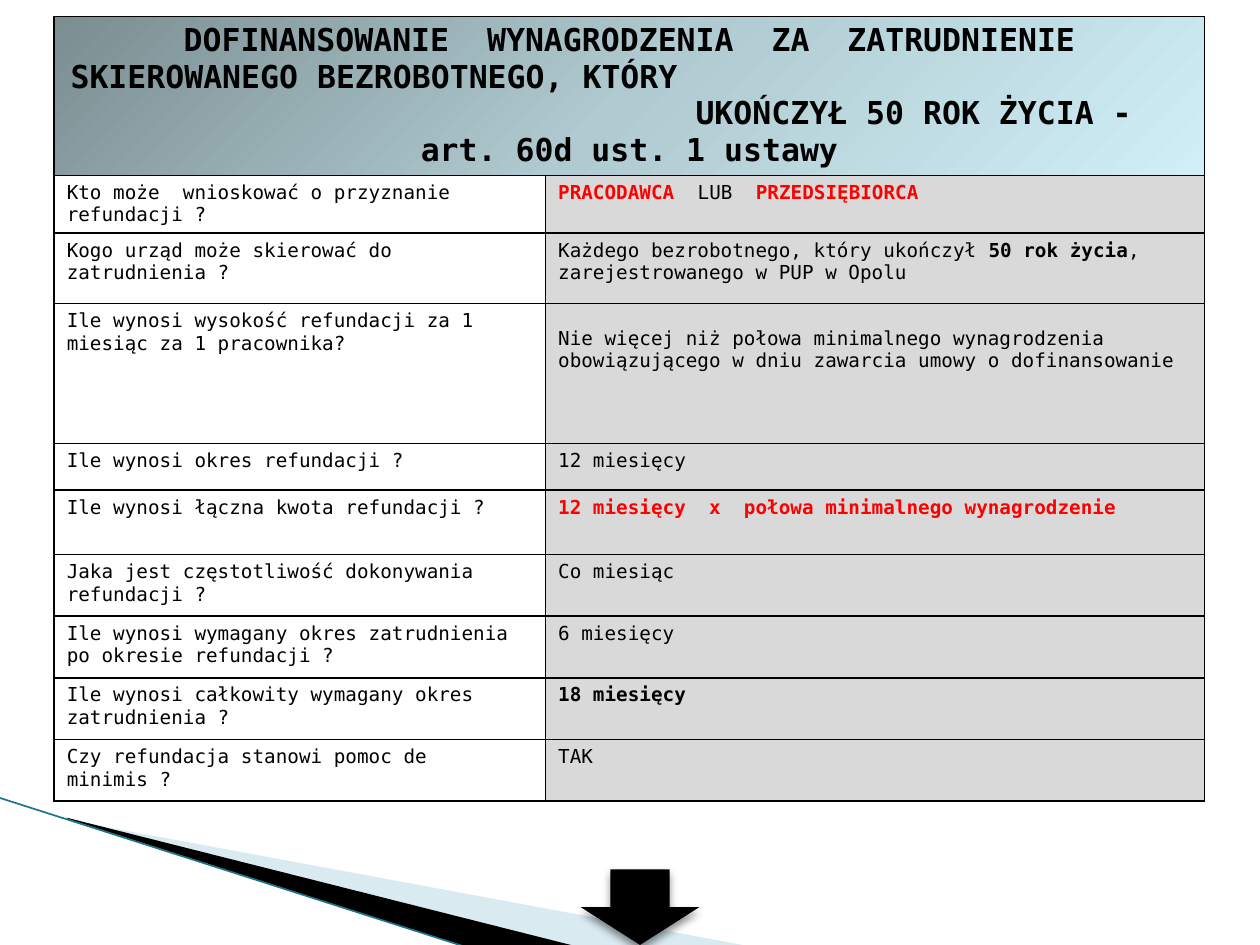
from copy import deepcopy

from lxml.etree import SubElement
from pptx import Presentation
from pptx.dml.color import RGBColor
from pptx.enum.shapes import MSO_CONNECTOR, MSO_SHAPE
from pptx.enum.text import PP_ALIGN
from pptx.oxml import parse_xml
from pptx.oxml.ns import nsdecls, qn
from pptx.util import Inches, Pt

FONT = "DejaVu Sans Mono"
BLACK, WHITE, RED, GREY = "000000", "FFFFFF", "FF0000", "D9D9D9"
GRADIENT = [(0, "7B8E92"), (0.5, "AFCAD0"), (1, "D0EFF7")]
COLUMNS = [3.9, 5.23]
HEADER_HEIGHT = 1.1
HEADER = [
    ("DOFINANSOWANIE  WYNAGRODZENIA  ZA  ZATRUDNIENIE", PP_ALIGN.CENTER, 0),
    ("SKIEROWANEGO BEZROBOTNEGO, KTÓRY", PP_ALIGN.LEFT, 0.03),
    ("UKOŃCZYŁ 50 ROK ŻYCIA -", PP_ALIGN.LEFT, 4.99),
    ("art. 60d ust. 1 ustawy", PP_ALIGN.CENTER, 0),
]
HOT = {"color": RED, "bold": True}
BOLD = {"bold": True}
ROWS = [
    (0.46, "Kto może  wnioskować o przyznanie refundacji ?",
     [("PRACODAWCA", HOT), ("  LUB  ", {}), ("PRZEDSIĘBIORCA", HOT)]),
    (0.56, "Kogo urząd może skierować do zatrudnienia ?",
     [("Każdego bezrobotnego, który ukończył ", {}), ("50 rok życia", BOLD),
      (", zarejestrowanego w PUP w Opolu", {})]),
    (1.11, "Ile wynosi wysokość refundacji za 1 miesiąc za 1 pracownika?",
     [("Nie więcej niż połowa minimalnego wynagrodzenia obowiązującego "
       "w dniu zawarcia umowy o dofinansowanie", {})]),
    (0.37, "Ile wynosi okres refundacji ?", [("12 miesięcy", {})]),
    (0.51, "Ile wynosi łączna kwota refundacji ?",
     [("12 miesięcy  x  połowa minimalnego wynagrodzenie", HOT)]),
    (0.49, "Jaka jest częstotliwość dokonywania refundacji ?",
     [("Co miesiąc", {})]),
    (0.49, "Ile wynosi wymagany okres zatrudnienia po okresie refundacji ?",
     [("6 miesięcy", {})]),
    (0.49, "Ile wynosi całkowity wymagany okres zatrudnienia ?",
     [("18 miesięcy", BOLD)]),
    (0.49, "Czy refundacja stanowi pomoc de minimis ?", [("TAK", {})]),
]
AMOUNT_ROW = 3


def rgb(value):
    """Turn a hex string into a colour."""
    return RGBColor.from_string(value)


def add_run(p, text, size=11, color=BLACK, bold=False):
    """Add formatted text to a paragraph."""
    r = p.add_run()
    r.text = text
    r.font.name = FONT
    r.font.size = Pt(size)
    r.font.bold = bold
    r.font.color.rgb = rgb(color)


def add_borders(cell):
    """Draw a thin black line on each side of a cell."""
    tcPr = cell._tc.get_or_add_tcPr()
    for i, side in enumerate(("lnL", "lnR", "lnT", "lnB")):
        tcPr.insert(i, parse_xml(
            f'<a:{side} {nsdecls("a")} w="{Pt(1)}"><a:solidFill>'
            f'<a:srgbClr val="{BLACK}"/></a:solidFill></a:{side}>'))


def fill_gradient(cell):
    """Fill a cell with the diagonal header gradient."""
    cell.fill.gradient()
    cell.fill.gradient_angle = 315
    stops = cell._tc.tcPr.find(".//" + qn("a:gsLst"))
    stops.append(deepcopy(stops[0]))
    for stop, (position, color) in zip(cell.fill.gradient_stops, GRADIENT):
        stop.position = position
        stop.color.rgb = rgb(color)


def fill_cell(cell, runs, color):
    """Write the runs of a body cell on a plain fill."""
    cell.fill.solid()
    cell.fill.fore_color.rgb = rgb(color)
    for text, look in runs:
        add_run(cell.text_frame.paragraphs[0], text, **look)
    add_borders(cell)


def fill_header(table):
    """Merge the top row and write the heading lines."""
    cell = table.cell(0, 0)
    cell.merge(table.cell(0, 1))
    fill_gradient(cell)
    tf = cell.text_frame
    for i, (text, align, indent) in enumerate(HEADER):
        p = tf.add_paragraph() if i else tf.paragraphs[0]
        p.alignment = align
        p._p.get_or_add_pPr().set("marL", str(Inches(indent)))
        add_run(p, text, size=18, bold=True)
    for part in (cell, table.cell(0, 1)):
        add_borders(part)


def add_refund_table(s):
    """Add the table of questions and answers."""
    heights = [HEADER_HEIGHT] + [row[0] for row in ROWS]
    table = s.shapes.add_table(
        len(heights), len(COLUMNS), Inches(0.43), Inches(0.13),
        Inches(sum(COLUMNS)), Inches(sum(heights))).table
    table.first_row = table.horz_banding = False
    for column, width in zip(table.columns, COLUMNS):
        column.width = Inches(width)
    for row, height in zip(table.rows, heights):
        row.height = Inches(height)
    fill_header(table)
    for i, (_, question, answer) in enumerate(ROWS, 1):
        fill_cell(table.cell(i, 0), [(question, {})], WHITE)
        fill_cell(table.cell(i, 1), answer, GREY)
    amount = table.cell(AMOUNT_ROW, 1)
    amount.margin_top, amount.margin_bottom = Inches(0.19), 0


def add_wedge(s, points, color, alpha=100):
    """Add a filled corner wedge through the given points."""
    start, *rest = [(Inches(x), Inches(y)) for x, y in points]
    builder = s.shapes.build_freeform(*start)
    builder.add_line_segments(rest, close=True)
    sp = builder.convert_to_shape()
    sp.shadow.inherit = False
    sp.line.fill.background()
    sp.fill.solid()
    sp.fill.fore_color.rgb = rgb(color)
    if alpha < 100:
        clr = sp._element.spPr.find(".//" + qn("a:srgbClr"))
        SubElement(clr, qn("a:alpha")).set("val", str(alpha * 1000))


def add_edge(s, start, end, color, width):
    """Add a straight line without shadow."""
    cx = s.shapes.add_connector(
        MSO_CONNECTOR.STRAIGHT, *(Inches(v) for v in (*start, *end)))
    cx.line.color.rgb = rgb(color)
    cx.line.width = Pt(width)
    SubElement(cx._element.spPr, qn("a:effectLst"))


def add_down_arrow(s, left, top, width, height):
    """Add the black arrow with its soft shadow."""
    sp = s.shapes.add_shape(
        MSO_SHAPE.DOWN_ARROW, *(Inches(v) for v in (left, top, width, height)))
    sp.fill.solid()
    sp.fill.fore_color.rgb = rgb(BLACK)
    sp.line.fill.background()
    sp._element.spPr.append(parse_xml(
        f'<a:effectLst {nsdecls("a")}><a:outerShdw blurRad="{Pt(5)}" '
        f'dist="{Pt(3)}" dir="5400000" rotWithShape="0">'
        f'<a:srgbClr val="{BLACK}"><a:alpha val="45000"/></a:srgbClr>'
        '</a:outerShdw></a:effectLst>'))


def main():
    """Build the slide and save it."""
    prs = Presentation()
    prs.slide_width, prs.slide_height = Inches(10), Inches(7.5)
    s = prs.slides.add_slide(prs.slide_layouts[6])
    add_wedge(s, [(0.55, 6.51), (5.95, 7.51), (4.56, 7.51), (0.55, 6.5)],
              "A0CBDC", alpha=40)
    add_wedge(s, [(0.53, 6.49), (4.57, 7.51), (3.72, 7.52), (0.54, 6.5)],
              BLACK)
    add_edge(s, (-0.01, 6.33), (3.71, 7.52), "1F7388", 0.95)
    add_refund_table(s)
    add_down_arrow(s, 4.61, 6.9, 0.94, 0.6)
    prs.save("out.pptx")


if __name__ == "__main__":
    main()
